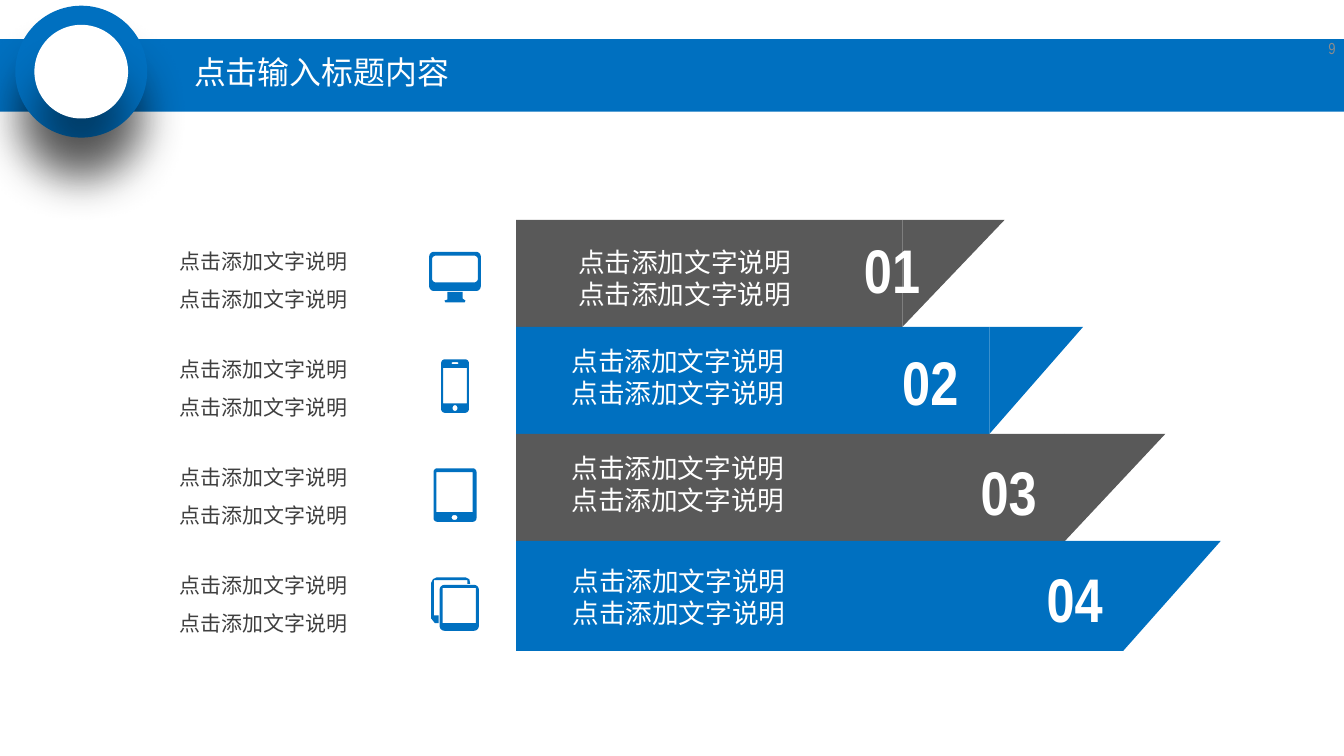
import math
from dataclasses import dataclass

from lxml import etree
from pptx import Presentation
from pptx.dml.color import RGBColor
from pptx.enum.shapes import MSO_SHAPE
from pptx.enum.text import MSO_ANCHOR, PP_ALIGN
from pptx.oxml.ns import qn
from pptx.util import Inches, Pt

RECTANGLE, OVAL, TRIANGLE = MSO_SHAPE.RECTANGLE, MSO_SHAPE.OVAL, MSO_SHAPE.RIGHT_TRIANGLE
TOP, MIDDLE = MSO_ANCHOR.TOP, MSO_ANCHOR.MIDDLE
LEFT, CENTER, RIGHT = PP_ALIGN.LEFT, PP_ALIGN.CENTER, PP_ALIGN.RIGHT


@dataclass(frozen=True)
class Theme:
    """Colours, font and type sizes of the slide."""
    blue: str = "0070C0"
    gray: str = "595959"
    white: str = "FFFFFF"
    ink: str = "3F3F3F"
    page_gray: str = "8C8C8C"
    font: str = "Arial Narrow"
    title: float = 24
    number: float = 46.4
    label: float = 20.1
    description: float = 15.8
    page: float = 12


THEME = Theme()
CAPTION = ["点击添加文字说明"] * 2
ROW_PITCH = 1.12
BANDS = [
    dict(number="01", color=THEME.gray, width=4.04, height=1.12, tip=1.07,
         label=(0.55, 0.22, 3.1), number_at=(3.54, 0.08)),
    dict(number="02", color=THEME.blue, width=4.95, height=1.12, tip=0.98,
         label=(0.48, 0.14, 3.17), number_at=(3.94, 0.13)),
    dict(number="03", color=THEME.gray, width=5.74, height=1.12, tip=1.05,
         label=(0.48, 0.14, 3.33), number_at=(4.76, 0.16)),
    dict(number="04", color=THEME.blue, width=6.35, height=1.15, tip=1.02,
         label=(0.49, 0.2, 3.55), number_at=(5.45, 0.16)),
]


def write(holder, lines, size, color=THEME.white, bold=False, align=LEFT,
          anchor=TOP, spacing=1.0):
    """Write one paragraph per line into a shape with the given format."""
    frame = holder.text_frame
    frame.word_wrap = True
    frame.vertical_anchor = anchor
    frame.text = "\n".join(lines)
    for paragraph in frame.paragraphs:
        paragraph.alignment = align
        paragraph.line_spacing = spacing
        font = paragraph.runs[0].font
        font.name, font.size, font.bold = THEME.font, Pt(size), bold
        font.color.rgb = RGBColor.from_string(color)


def paint(shape, color):
    """Give a shape a plain fill without line or shadow."""
    shape.fill.solid()
    shape.fill.fore_color.rgb = RGBColor.from_string(color)
    shape.line.fill.background()
    shape.shadow.inherit = False
    return shape


def block(shapes, kind, box, color):
    """Add a plain preset shape in a box given in inches."""
    return paint(shapes.add_shape(kind, *map(Inches, box)), color)


def textbox(shapes, box, lines, size, **style):
    """Add a formatted text box in a box given in inches."""
    write(shapes.add_textbox(*map(Inches, box)), lines, size, **style)


def drop_shadow(shape):
    """Add a soft black shadow straight below a shape."""
    effects = shape.element.spPr.find(qn("a:effectLst"))
    shadow = etree.SubElement(effects, qn("a:outerShdw"), blurRad=str(Pt(33)),
                              dist=str(Pt(33)), dir="5400000", algn="t", rotWithShape="0")
    black = etree.SubElement(shadow, qn("a:srgbClr"), val="000000")
    etree.SubElement(black, qn("a:alpha"), val="43000")


def rounded(left, top, width, height, radius=0.0):
    """Return the points of a rectangle with rounded corners."""
    centers = [(left + width - radius, top + height - radius), (left + radius, top + height - radius),
               (left + radius, top + radius), (left + width - radius, top + radius)]
    return [(x + radius * math.cos(math.radians(angle)), y + radius * math.sin(math.radians(angle)))
            for quarter, (x, y) in enumerate(centers)
            for angle in range(90 * quarter, 90 * quarter + 91, 15)]


def icons():
    """Return width, height and contours of the four device icons."""
    monitor = [rounded(0, 0, 0.54, 0.41, 0.05), rounded(0.03, 0.04, 0.48, 0.28, 0.04),
               [(0.19, 0.42), (0.35, 0.42), (0.35, 0.49), (0.38, 0.51), (0.37, 0.53),
                (0.17, 0.53), (0.16, 0.51), (0.19, 0.5)]]
    phone = [rounded(0, 0, 0.29, 0.56, 0.04), rounded(0.02, 0.09, 0.25, 0.37),
             rounded(0.11, 0.03, 0.07, 0.02, 0.01), rounded(0.12, 0.48, 0.05, 0.06, 0.025)]
    tablet = [rounded(0, 0, 0.45, 0.56, 0.04), rounded(0.03, 0.04, 0.38, 0.42),
              rounded(0.19, 0.49, 0.06, 0.05, 0.025)]
    pages = [rounded(0.09, 0.08, 0.41, 0.48, 0.05), rounded(0.12, 0.11, 0.35, 0.37),
             [(0.08, 0.48), (0.04, 0.48), (0, 0.43), (0, 0.06), (0.02, 0.02), (0.06, 0),
              (0.36, 0), (0.4, 0.02), (0.41, 0.07), (0.38, 0.07), (0.38, 0.03),
              (0.03, 0.03), (0.03, 0.4), (0.08, 0.4)]]
    return [(0.54, 0.53, monitor), (0.29, 0.56, phone), (0.45, 0.56, tablet), (0.5, 0.56, pages)]


def draw_icon(shapes, center_x, center_y, icon):
    """Draw an icon as one outline with holes around a centre."""
    width, height, contours = icon
    left, top = center_x - width / 2, center_y - height / 2
    outline = None
    for contour in contours:
        points = [(Inches(left + x), Inches(top + y)) for x, y in contour]
        if outline is None:
            outline = shapes.build_freeform(*points[0])
        else:
            outline.move_to(*points[0])
        outline.add_line_segments(points[1:], close=True)
    paint(outline.convert_to_shape(), THEME.blue)


def header(slide, left, top, width, height):
    """Draw the title bar with its round badge, title and page number."""
    block(slide.shapes, RECTANGLE, (left, top, width, height), THEME.blue)
    badge_x, badge_y = left + 0.85, top + 0.34
    for size, color in ((1.38, THEME.blue), (0.98, THEME.white)):
        disc = (badge_x - size / 2, badge_y - size / 2, size, size)
        drop_shadow(block(slide.shapes, OVAL, disc, color))
    title = slide.shapes.title
    title.left, title.top = Inches(left + 1.93), Inches(top + 0.09)
    title.width, title.height = Inches(3.47), Inches(0.55)
    write(title, ["点击输入标题内容"], THEME.title, anchor=MIDDLE, spacing=0.9)
    title.element.getparent().append(title.element)
    textbox(slide.shapes, (left + width - 0.68, top - 0.12, 0.69, 0.42), ["9"], THEME.page,
            color=THEME.page_gray, align=RIGHT, anchor=MIDDLE)


def band(slide, left, top, number, color, width, height, tip, label, number_at):
    """Draw a slanted band with its label and number."""
    shapes = slide.shapes.add_group_shape().shapes
    block(shapes, RECTANGLE, (left, top, width, height), color)
    shift = (height - tip) / 2
    slant = (left + width - shift, top + shift, height, tip)
    block(shapes, TRIANGLE, slant, color).rotation = 90
    textbox(shapes, (left + number_at[0], top + number_at[1], 1.1, 0.88), [number],
            THEME.number, bold=True)
    label_x, label_y, label_width = label
    caption = block(shapes, RECTANGLE, (left + label_x, top + label_y, label_width, 0.78), color)
    write(caption, CAPTION, THEME.label)


def bands(slide, left, top):
    """Stack the four bands below each other."""
    for row, content in enumerate(BANDS):
        band(slide, left, top + row * ROW_PITCH, **content)


def descriptions(slide, left, top):
    """Place a description and a device icon beside each band."""
    for row, icon in enumerate(icons()):
        textbox(slide.shapes, (left, top + row * 1.13, 2.91, 0.86), CAPTION,
                THEME.description, color=THEME.ink, align=CENTER, spacing=1.5)
        draw_icon(slide.shapes, left + 3.46, top + 0.48 + row * 1.14, icon)


def main():
    """Build the slide and save it."""
    deck = Presentation()
    deck.slide_width, deck.slide_height = Inches(14.06), Inches(7.91)
    slide = deck.slides.add_slide(deck.slide_layouts[5])
    header(slide, 0, 0.41, 14.06, 0.76)
    bands(slide, 5.4, 2.3)
    descriptions(slide, 1.3, 2.42)
    deck.save("out.pptx")


if __name__ == "__main__":
    main()
